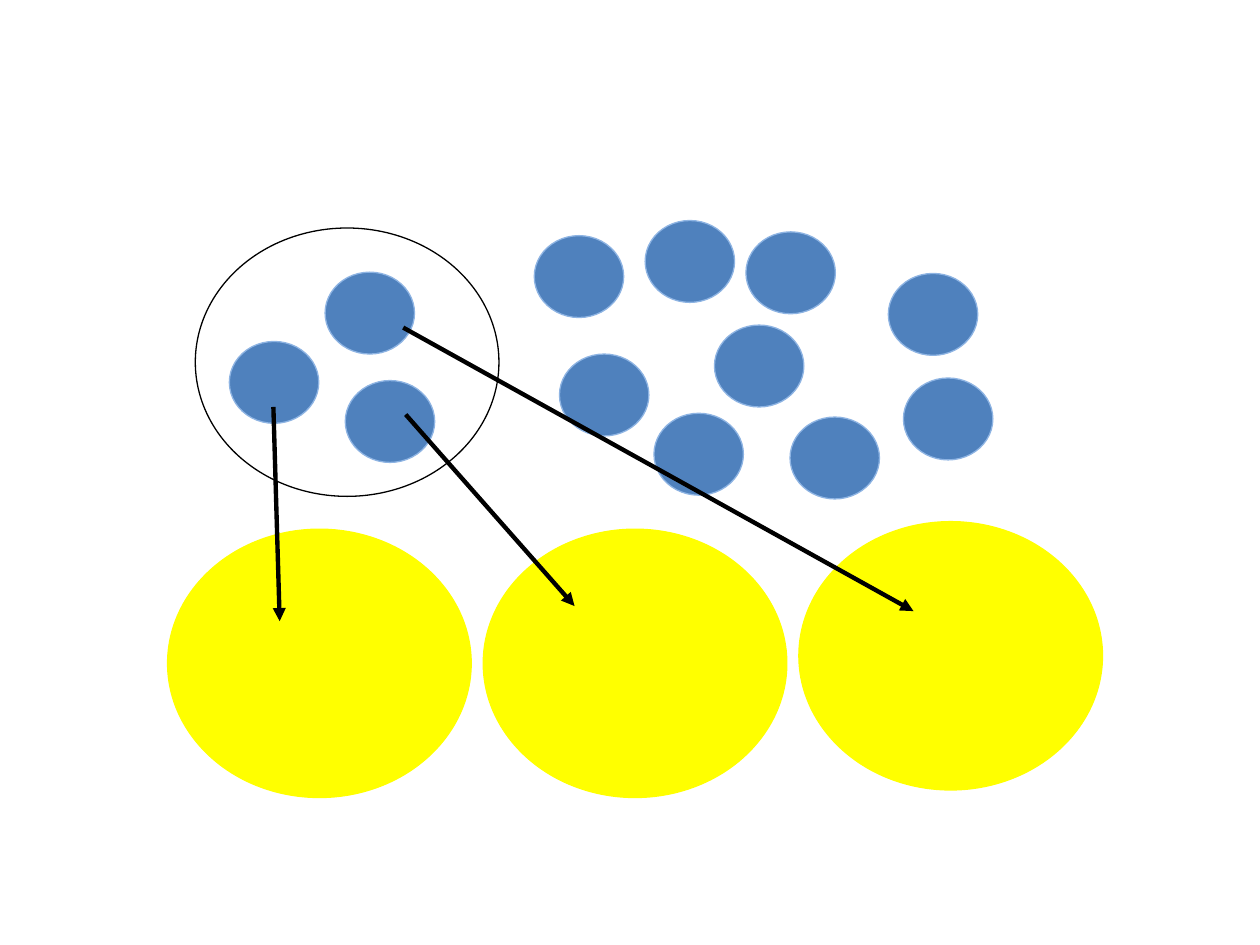
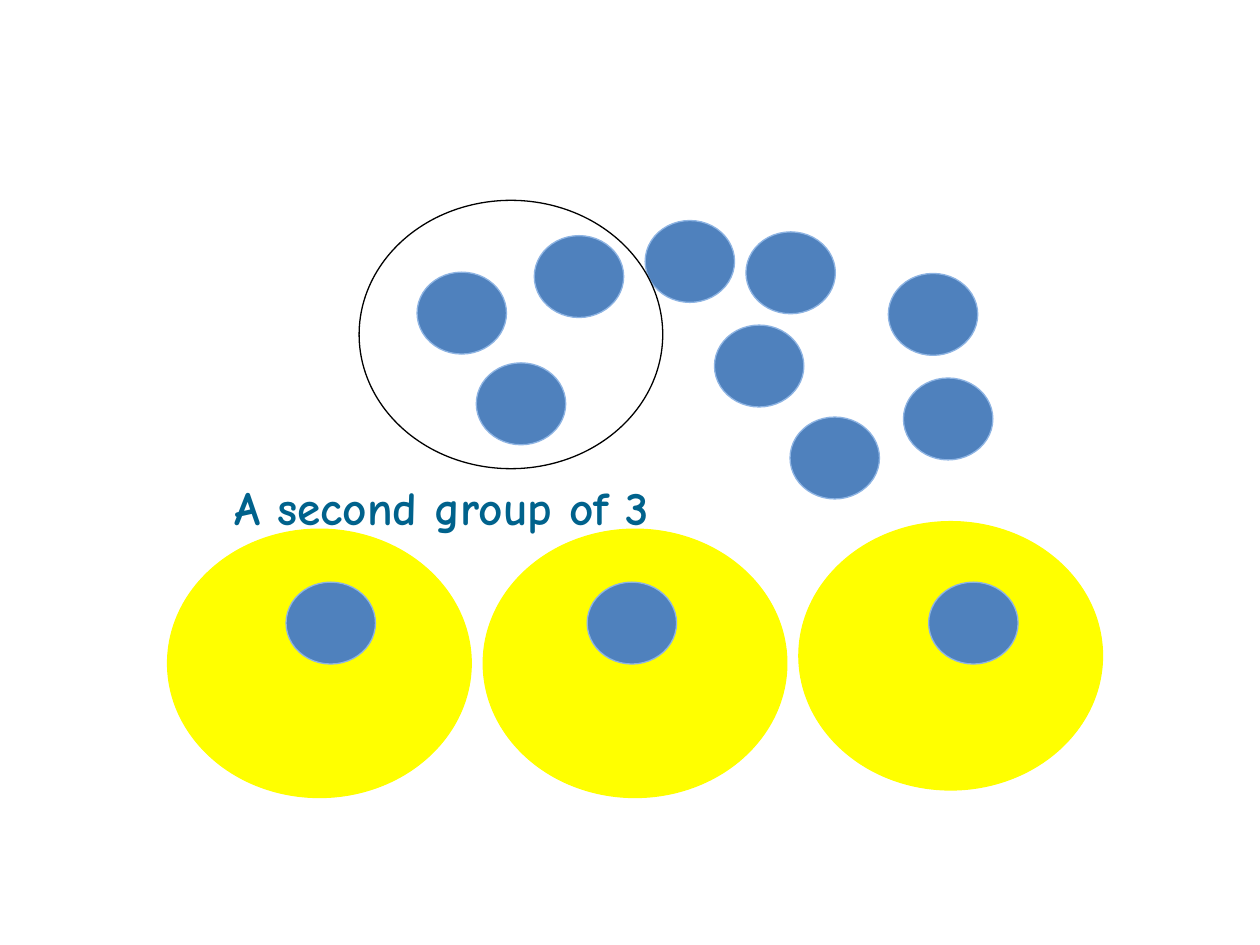
from pptx import Presentation
from pptx.dml.color import RGBColor
from pptx.enum.shapes import MSO_CONNECTOR, MSO_SHAPE
from pptx.enum.text import MSO_ANCHOR, MSO_AUTO_SIZE, PP_ALIGN
from pptx.oxml.ns import qn
from pptx.util import Inches, Pt
from lxml.etree import SubElement

COLS, ROWS = 10, 7.5
CELL = Inches(1)
YELLOW = RGBColor(0xFF, 0xFF, 0x00)
BLUE = RGBColor(0x4F, 0x81, 0xBD)
PALE = RGBColor(0x8E, 0xB4, 0xE3)
BLACK = RGBColor(0x00, 0x00, 0x00)
TEAL = RGBColor(0x00, 0x62, 0x8C)
FONT = "Comic Neue"
DOT = (0.71, 0.65)
RING = (2.41, 2.13)
PLATE_LEFT, PLATE_STEP = 1.33, 2.505
PLATE_TOPS = (4.2, 4.2, 4.14)
LOOSE = [(5.67, 2.58), (6.27, 3.31), (7.17, 3), (7.05, 2.17),
         (5.92, 1.84), (5.12, 1.75), (4.24, 1.87)]


def grid(*cells):
    """Turn counts of columns or rows into lengths."""
    return [round(cell * CELL) for cell in cells]


def oval(slide, spot, size, fill, line):
    """Draw an ellipse with its top left corner at a spot."""
    shape = slide.shapes.add_shape(MSO_SHAPE.OVAL, *grid(*spot, *size))
    shape.shadow.inherit = False
    if fill is None:
        shape.fill.background()
    else:
        shape.fill.solid()
        shape.fill.fore_color.rgb = fill
    shape.line.color.rgb = line
    shape.line.width = Pt(0.75)


def plates(slide):
    """Draw the row of three yellow plates."""
    for index, top in enumerate(PLATE_TOPS):
        left = PLATE_LEFT + index * PLATE_STEP
        oval(slide, (left, top), RING, YELLOW, YELLOW)


def dots(slide, spots):
    """Draw a blue dot at each spot."""
    for spot in spots:
        oval(slide, spot, DOT, BLUE, PALE)


def ring(slide, spot):
    """Draw the outline that circles a group of dots."""
    oval(slide, spot, RING, None, BLACK)


def arrow(slide, start, end):
    """Draw a thick arrow from start to end."""
    link = slide.shapes.add_connector(
        MSO_CONNECTOR.STRAIGHT, *grid(*start, *end))
    link.line.color.rgb = BLACK
    link.line.width = Pt(2.5)
    SubElement(link.line._get_or_add_ln(), qn("a:tailEnd"), type="triangle")
    SubElement(link._element.spPr, qn("a:effectLst"))


def title(slide, text, spot, size):
    """Place and format the slide's title."""
    shape = slide.shapes.title
    shape.left, shape.top, shape.width, shape.height = grid(*spot, *size)
    frame = shape.text_frame
    frame.text = text
    frame.word_wrap = True
    frame.auto_size = MSO_AUTO_SIZE.NONE
    frame.vertical_anchor = MSO_ANCHOR.BOTTOM
    frame.margin_left = frame.margin_right = Inches(0.07)
    frame.margin_top = frame.margin_bottom = Inches(0.04)
    para = frame.paragraphs[0]
    para.alignment = PP_ALIGN.LEFT
    para.font.name = FONT
    para.font.size = Pt(27)
    para.font.bold = True
    para.font.color.rgb = TEAL


def first(deck):
    """Build the slide that deals out the first group."""
    slide = deck.slides.add_slide(deck.slide_layouts[6])
    plates(slide)
    dots(slide, [(1.82, 2.71), (2.58, 2.16), (2.74, 3.02),
                 (4.44, 2.81), (5.19, 3.28)] + LOOSE)
    ring(slide, (1.55, 1.81))
    for start, end in [((2.17, 3.23), (2.22, 4.93)),
                       ((3.22, 3.29), (4.56, 4.81)),
                       ((3.2, 2.6), (7.25, 4.85))]:
        arrow(slide, start, end)


def second(deck):
    """Build the slide that circles the second group."""
    slide = deck.slides.add_slide(deck.slide_layouts[5])
    title(slide, "A second group of 3", (1.79, 3.73), (6.5, 0.56))
    plates(slide)
    dots(slide, [(3.78, 2.88), (3.31, 2.16)] + LOOSE)
    ring(slide, (2.85, 1.59))
    dots(slide, [(left, 4.62) for left in (2.27, 4.66, 7.37)])


def main():
    """Build and save both slides."""
    deck = Presentation()
    deck.slide_width, deck.slide_height = grid(COLS, ROWS)
    first(deck)
    second(deck)
    deck.save("out.pptx")


if __name__ == "__main__":
    main()
